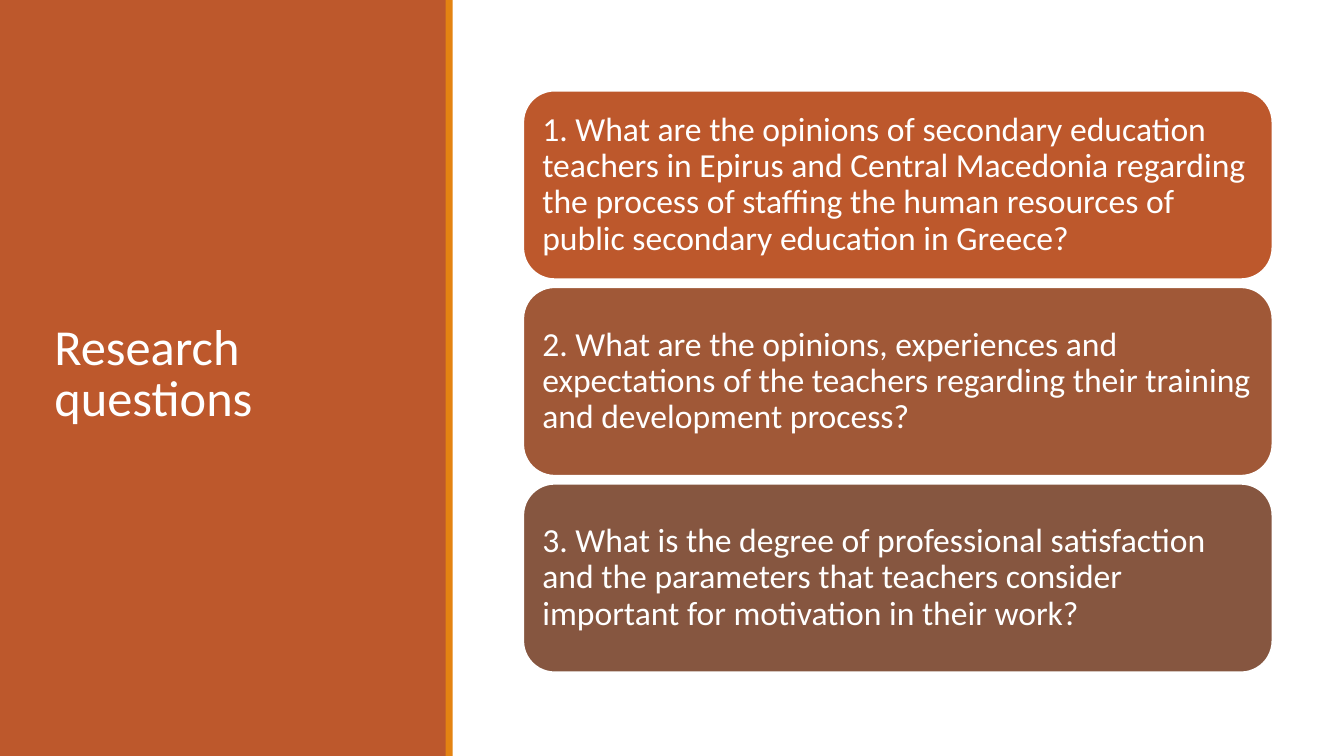
from pptx import Presentation
from pptx.dml.color import RGBColor
from pptx.enum.shapes import MSO_SHAPE
from pptx.enum.text import MSO_ANCHOR, MSO_AUTO_SIZE, PP_ALIGN
from pptx.util import Inches, Pt

RUST = RGBColor(0xBD, 0x58, 0x2C)
SIENNA = RGBColor(0xA0, 0x58, 0x37)
BROWN = RGBColor(0x86, 0x56, 0x40)
ORANGE = RGBColor(0xE4, 0x83, 0x12)
WHITE = RGBColor(0xFF, 0xFF, 0xFF)

QUESTIONS = [
    ("1. What are the opinions of secondary education teachers in Epirus and "
     "Central Macedonia regarding the process of staffing the human resources "
     "of public secondary education in Greece?", RUST),
    ("2. What are the opinions, experiences and expectations of the teachers "
     "regarding their training and development process?", SIENNA),
    ("3. What is the degree of professional satisfaction and the parameters "
     "that teachers consider important for motivation in their work?", BROWN),
]
CARD_TOP = 0.9
CARD_PITCH = 1.95


class SlideBuilder:
    """Draws styled elements on the current slide."""

    font_name = "Calibri"
    text_color = WHITE

    def __init__(self, slide):
        self.slide = slide

    def set_text(self, shape, text, size, line_spacing, inset):
        frame = shape.text_frame
        frame.text = text
        frame.word_wrap = True
        frame.auto_size = MSO_AUTO_SIZE.NONE
        frame.vertical_anchor = MSO_ANCHOR.MIDDLE
        frame.margin_left = frame.margin_right = Inches(inset)
        frame.margin_top = frame.margin_bottom = Inches(inset)
        paragraph = frame.paragraphs[0]
        paragraph.alignment = PP_ALIGN.LEFT
        paragraph.line_spacing = line_spacing
        font = paragraph.runs[0].font
        font.name = self.font_name
        font.size = Pt(size)
        font.color.rgb = self.text_color

    def block(self, kind, left, top, width, height, color):
        shape = self.slide.shapes.add_shape(
            kind, Inches(left), Inches(top), Inches(width), Inches(height))
        shape.shadow.inherit = False
        shape.fill.solid()
        shape.fill.fore_color.rgb = color
        shape.line.fill.background()
        return shape

    def panel(self, left, width, color):
        return self.block(MSO_SHAPE.RECTANGLE, left, 0, width, 7.5, color)

    def title(self, text):
        title = self.slide.shapes.title
        title.left, title.top = Inches(0.54), Inches(0.57)
        title.width, title.height = Inches(3.37), Inches(6.31)
        self.set_text(title, text, 36, 0.85, 0)
        title.element.getparent().append(title.element)

    def card(self, top, text, color):
        card = self.block(MSO_SHAPE.ROUNDED_RECTANGLE, 5.19, top, 7.43, 1.87, color)
        card.line.color.rgb = WHITE
        card.line.width = Pt(1.25)
        self.set_text(card, text, 24, 0.9, 0.1)


def main():
    presentation = Presentation()
    presentation.slide_width = Inches(13.33)
    presentation.slide_height = Inches(7.5)
    slide = presentation.slides.add_slide(presentation.slide_layouts[5])
    slide.background.fill.solid()
    slide.background.fill.fore_color.rgb = WHITE

    builder = SlideBuilder(slide)
    builder.panel(0, 4.43, RUST)
    builder.title("Research questions")
    builder.panel(4.42, 0.07, ORANGE)
    for index, (question, color) in enumerate(QUESTIONS):
        builder.card(CARD_TOP + index * CARD_PITCH, question, color)

    presentation.save("out.pptx")


if __name__ == "__main__":
    main()
